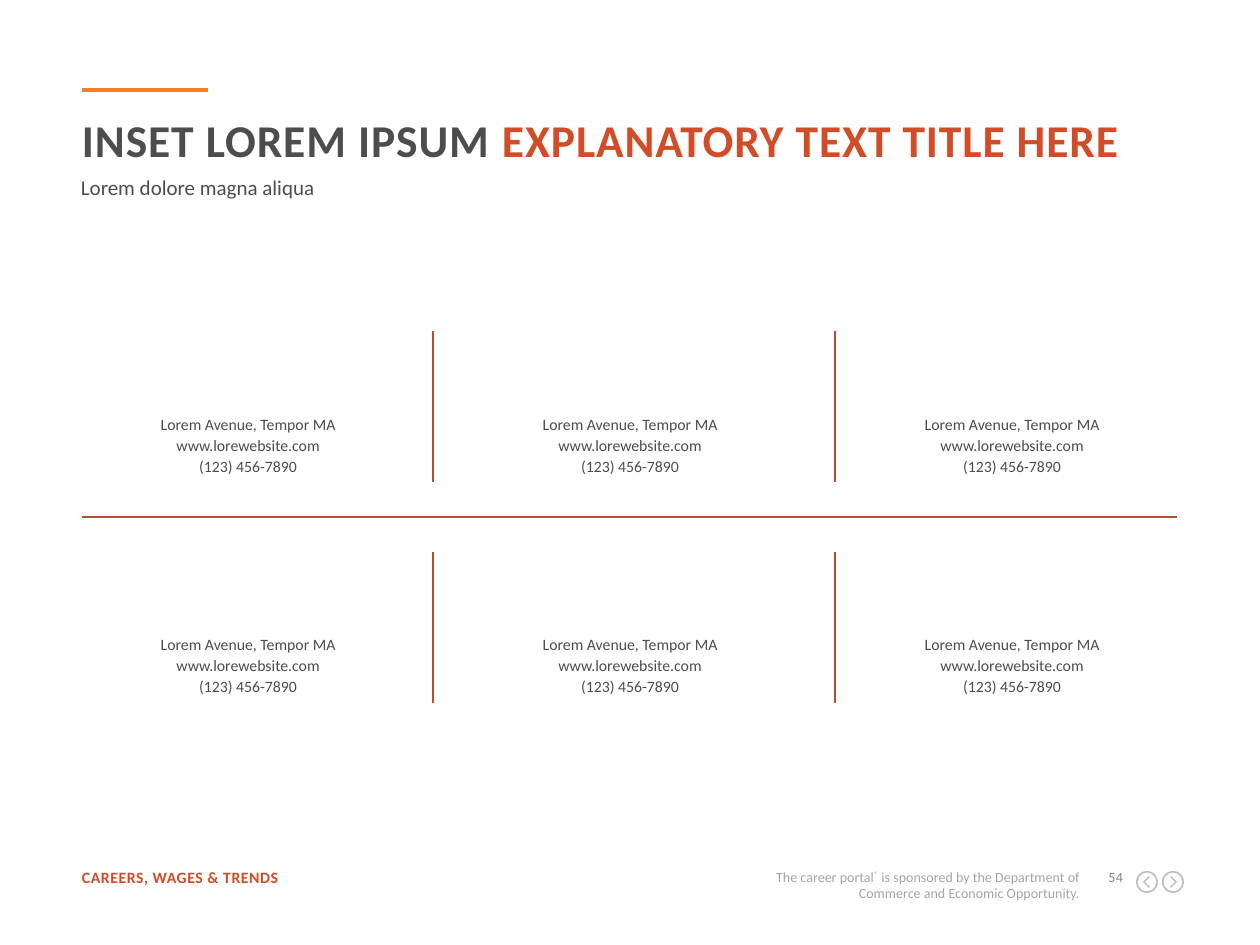
"""Build the contact grid slide with its title, divider lines and footer."""
from lxml import etree
from pptx import Presentation
from pptx import util as u
from pptx.dml.color import RGBColor
from pptx.enum import shapes, text
from pptx.oxml.ns import qn

SCALE = 914400 / 126
ORANGE = RGBColor(0xF5, 0x80, 0x25)
RED = RGBColor(0xD1, 0x4C, 0x27)
RUST = RGBColor(0xB4, 0x4F, 0x30)
DARK = RGBColor(0x4D, 0x4D, 0x4D)
GRAY = RGBColor(0x80, 0x80, 0x80)
PALE = RGBColor(0xA5, 0xA5, 0xA5)
SILVER = RGBColor(0xBF, 0xBF, 0xBF)
LEFT, CENTER, RIGHT = text.PP_ALIGN.LEFT, text.PP_ALIGN.CENTER, text.PP_ALIGN.RIGHT

prs = Presentation()
prs.slide_width, prs.slide_height = u.Inches(10), u.Inches(7.5)
s = prs.slides.add_slide(prs.slide_layouts[6])


def add_line(box, color, width):
    sp = s.shapes.add_connector(
        shapes.MSO_CONNECTOR.STRAIGHT, *(u.Emu(round(v * SCALE)) for v in box))
    sp.line.color.rgb = color
    sp.line.width = u.Pt(width)
    etree.SubElement(sp._element.spPr, qn("a:effectLst"))


def add_text(box, paragraphs, size, color, align=LEFT, spacing=None, bold=False, attrs=None):
    sp = s.shapes.add_textbox(*(u.Emu(round(v * SCALE)) for v in box))
    tf = sp.text_frame
    frame = {"word_wrap": True, "margin_left": 0, "margin_top": 0,
             "margin_right": 0, "margin_bottom": 0}
    for name, value in frame.items():
        setattr(tf, name, value)
    for i, runs in enumerate(paragraphs):
        p = tf.add_paragraph() if i else tf.paragraphs[0]
        p.alignment = align
        if spacing:
            p.line_spacing = u.Pt(spacing)
        for words, run_color, run_attrs in runs:
            for j, part in enumerate(words.split("\n")):
                if j:
                    p.add_line_break()
                r = p.add_run()
                r.text = part
                font = {"name": "Calibri", "size": u.Pt(size), "bold": bold}
                for name, value in font.items():
                    setattr(r.font, name, value)
                r.font.color.rgb = run_color or color
                for name, value in {**(attrs or {}), **run_attrs}.items():
                    r.font._element.set(name, value)


add_line((82, 90, 208, 90), ORANGE, 2.25)
add_text((82, 868, 246, 19), [[("CAREERS, WAGES & TRENDS", None, {})]],
         9, RED, bold=True, attrs={"spc": "30"})
sponsor = [("The career portal", None, {}), ("®", None, {"baseline": "30000"}),
           (" is sponsored by the Department of Commerce and Economic Opportunity.", None, {})]
add_text((714, 868, 366, 34), [sponsor], 8, PALE, RIGHT)
add_text((1094, 868, 29, 17), [[("54", None, {})]], 8, GRAY, RIGHT, attrs={"spc": "30"})

CHEVRON = [(-3, -5), (-2, -6), (4, 0), (-2, 6), (-3, 5), (2, 0)]
for center, way in ((1147, -1), (1173, 1)):
    ring = s.shapes.add_shape(
        shapes.MSO_SHAPE.DONUT, *(u.Emu(round(v * SCALE)) for v in (center - 11, 871, 22, 22)))
    ring.adjustments[0] = 0.07
    points = [(center + way * x, 882 + y) for x, y in CHEVRON]
    builder = s.shapes.build_freeform(*points[0], scale=SCALE)
    builder.add_line_segments(points[1:], close=True)
    for sp in (ring, builder.convert_to_shape()):
        sp.shadow.inherit = False
        sp.fill.solid()
        sp.fill.fore_color.rgb = SILVER
        sp.line.fill.background()

add_line((82, 517, 1177, 517), RUST, 0.75)
contact = [[("Lorem Avenue, Tempor MA\nwww.lorewebsite.com", None, {})],
           [("(123) 456-7890", None, {})]]
for line_top, text_top in ((331, 413), (552, 633)):
    for x in (433, 835):
        add_line((x, line_top, x, line_top + 151), RUST, 0.75)
    for col in range(3):
        add_text((106 + 382 * col, text_top, 284, 63), contact, 9, DARK, CENTER, 12)

title = [("INSET LOREM IPSUM ", None, {}), ("EXPLANATORY TEXT TITLE HERE", RED, {})]
add_text((82, 112, 1096, 43), [title], 26, DARK, bold=True, attrs={"spc": "50"})
add_text((81, 179, 1096, 53), [[("Lorem dolore magna aliqua", None, {})]], 12, DARK, spacing=12)

prs.save("out.pptx")
